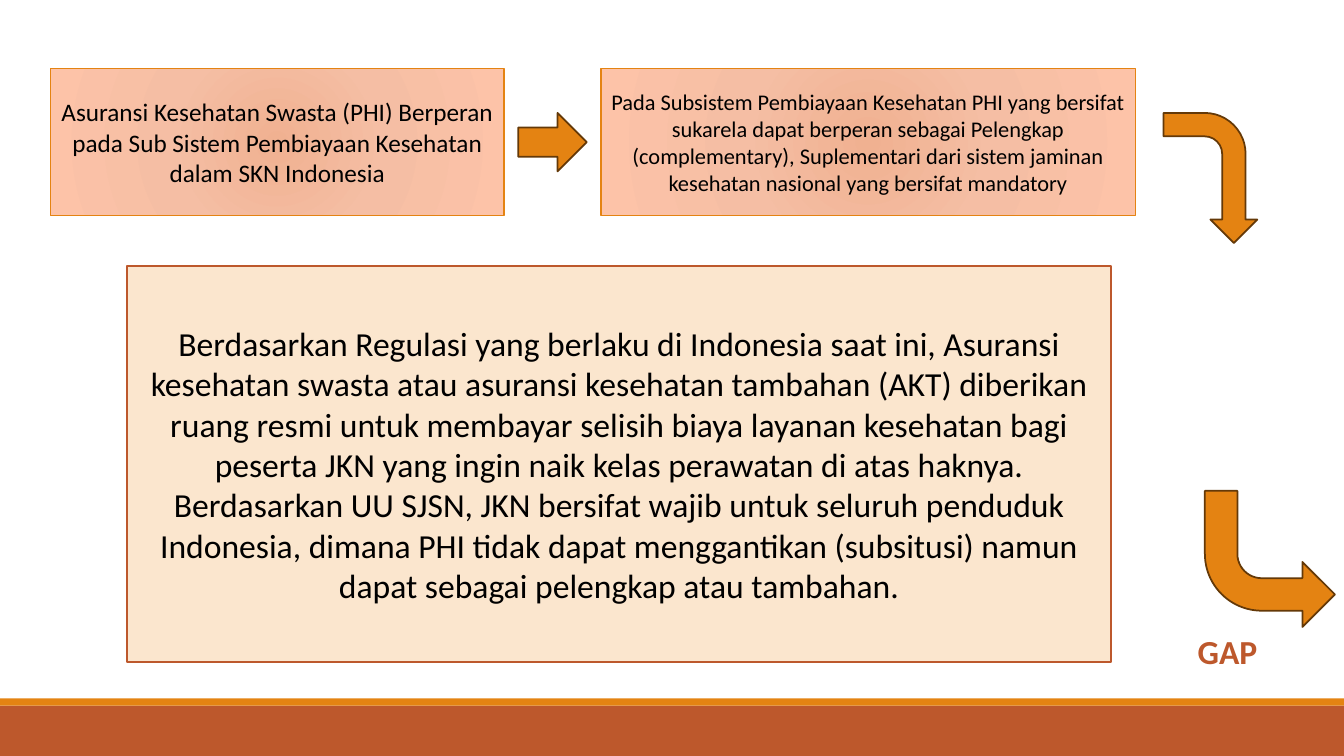
from pptx import Presentation
from pptx.dml.color import RGBColor
from pptx.enum import shapes, text
from pptx.oxml import parse_xml
from pptx.oxml.ns import nsdecls
from pptx.util import Inches, Pt

COLORS = {
    "orange": "E48312",
    "rust": "BD582C",
    "brown": "643908",
    "cream": "FBE6CE",
    "black": "000000",
}
PEACH_STOPS = [(0, "F0B191"), (45, "F5BEA4"), (100, "FDC3A8")]
SHAPE = shapes.MSO_SHAPE


class SlideBuilder:
    font_name = "Calibri"

    def __init__(self, slide):
        self.slide = slide

    def color(self, name):
        return RGBColor.from_string(COLORS[name])

    def shape(self, kind, box, fill, line=None, line_width=1):
        shape = self.slide.shapes.add_shape(kind, *map(Inches, box))
        shape.shadow.inherit = False
        shape.fill.solid()
        shape.fill.fore_color.rgb = self.color(fill)
        if line:
            shape.line.color.rgb = self.color(line)
            shape.line.width = Pt(line_width)
        else:
            shape.line.fill.background()
        return shape

    def set_words(self, shape, words, size, color="black", bold=False,
                  align=text.PP_ALIGN.CENTER):
        frame = shape.text_frame
        frame.word_wrap = True
        frame.text = words
        paragraph = frame.paragraphs[0]
        paragraph.alignment = align
        font = paragraph.runs[0].font
        font.name, font.size, font.bold = self.font_name, Pt(size), bold
        font.color.rgb = self.color(color)

    def panel(self, box, words, size, fill, line):
        panel = self.shape(SHAPE.RECTANGLE, box, fill, line)
        panel.text_frame.vertical_anchor = text.MSO_ANCHOR.MIDDLE
        self.set_words(panel, words, size)
        return panel

    def glowing_panel(self, box, words, size):
        """Panel with a radial peach gradient, darkest in the middle."""
        panel = self.panel(box, words, size, "cream", "orange")
        stops = "".join(
            f'<a:gs pos="{position * 1000}"><a:srgbClr val="{value}"/></a:gs>'
            for position, value in PEACH_STOPS)
        gradient = parse_xml(
            f'<a:gradFill {nsdecls("a")} rotWithShape="1"><a:gsLst>{stops}</a:gsLst>'
            '<a:path path="circle"><a:fillToRect l="50000" t="50000" '
            'r="50000" b="50000"/></a:path></a:gradFill>')
        properties = panel._element.spPr
        solid = properties.find("{*}solidFill")
        properties.replace(solid, gradient)

    def arrow(self, kind, box, rotation=0, flip=False):
        arrow = self.shape(kind, box, "orange", "brown", 1.25)
        arrow.rotation = rotation
        if flip:
            arrow._element.spPr.xfrm.set("flipV", "1")

    def label(self, box, words, size, color):
        label = self.slide.shapes.add_textbox(*map(Inches, box))
        self.set_words(label, words, size, color, True, text.PP_ALIGN.LEFT)


def main():
    presentation = Presentation()
    presentation.slide_width = Inches(13.33)
    presentation.slide_height = Inches(7.5)
    builder = SlideBuilder(
        presentation.slides.add_slide(presentation.slide_layouts[6]))

    builder.shape(SHAPE.RECTANGLE, (0, 7, 13.33, 0.5), "rust")
    builder.shape(SHAPE.RECTANGLE, (0, 6.93, 13.33, 0.07), "orange")

    builder.glowing_panel(
        (0.5, 0.68, 4.5, 1.46),
        "Asuransi Kesehatan Swasta (PHI) Berperan pada Sub Sistem "
        "Pembiayaan Kesehatan dalam SKN Indonesia", 18)
    builder.arrow(SHAPE.RIGHT_ARROW, (5.14, 1.12, 0.68, 0.58))
    builder.glowing_panel(
        (5.96, 0.68, 5.3, 1.46),
        "Pada Subsistem Pembiayaan Kesehatan PHI yang bersifat sukarela "
        "dapat berperan sebagai Pelengkap (complementary), Suplementari dari "
        "sistem jaminan kesehatan nasional yang bersifat mandatory", 16)
    builder.arrow(SHAPE.BENT_ARROW, (11.36, 1.3, 1.29, 0.93), rotation=90)

    builder.panel(
        (1.26, 2.64, 9.76, 3.93),
        "Berdasarkan Regulasi yang berlaku di Indonesia saat ini, Asuransi "
        "kesehatan swasta atau asuransi kesehatan tambahan (AKT) diberikan "
        "ruang resmi untuk membayar selisih biaya layanan kesehatan bagi "
        "peserta JKN yang ingin naik kelas perawatan di atas haknya. "
        "Berdasarkan UU SJSN, JKN bersifat wajib untuk seluruh penduduk "
        "Indonesia, dimana PHI tidak dapat menggantikan (subsitusi) namun "
        "dapat sebagai pelengkap atau tambahan.", 24, "cream", "rust")
    builder.arrow(SHAPE.BENT_ARROW, (11.95, 4.87, 1.29, 1.35), flip=True)
    builder.label((11.78, 6.21, 1.29, 0.5), "GAP", 24, "rust")

    presentation.save("out.pptx")


if __name__ == "__main__":
    main()
